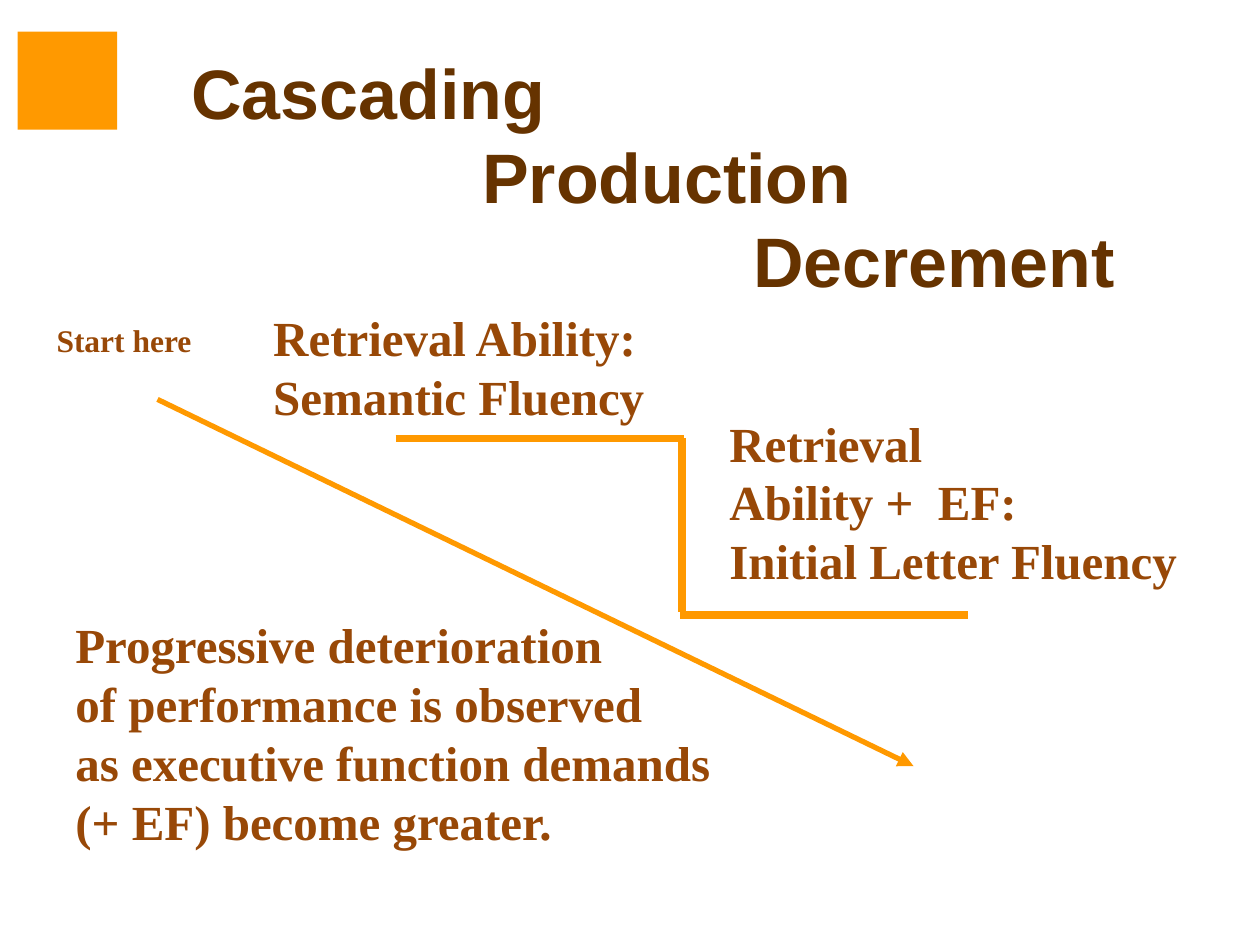
from lxml.etree import SubElement
from pptx import Presentation
from pptx.dml.color import RGBColor
from pptx.enum.shapes import MSO_CONNECTOR, MSO_SHAPE
from pptx.enum.text import MSO_ANCHOR
from pptx.oxml.ns import qn
from pptx.util import Inches, Pt

BROWN = RGBColor(0x66, 0x33, 0x00)
RUST = RGBColor(0x98, 0x48, 0x07)
GOLD = RGBColor(0xFF, 0x99, 0x00)

HEAD = {"name": "Arial", "size": Pt(40), "bold": True}
BODY = {"name": "Times New Roman", "size": Pt(28), "bold": True}
NOTE = {**BODY, "size": Pt(18)}
LEAD = 1.2  # line pitch as a share of the text size

# Text boxes: place, wrap, format, colour, lines as (indent, words)
TEXTS = [
    ((1.42, 0.77, 8.5, 1.25), True, HEAD, BROWN,
     [(0, "Cascading"), (2.31, "Production"), (4.46, "Decrement")]),
    ((2.07, 2.39, 3.22, 1.04), False, BODY, RUST,
     [(0, "Retrieval Ability:"), (0, "Semantic Fluency")]),
    ((5.69, 3.23, 3.95, 1.51), True, BODY, RUST,
     [(0, "Retrieval"), (0, "Ability +  EF:"), (0, "Initial Letter Fluency")]),
    ((0.5, 4.83, 5.42, 1.97), True, BODY, RUST,
     [(0, "Progressive deterioration"), (0, "of performance is observed"),
      (0, "as executive function demands (+ EF) become greater.")]),
    ((0.35, 2.5, 1.28, 0.4), False, NOTE, RUST, [(0, "Start here")]),
]

# Lines: start, end, width, arrow at the end
LINES = [
    ((3.14, 3.48), (5.43, 3.48), 4.5, False),
    ((5.41, 3.48), (5.41, 4.86), 4.5, False),
    ((5.4, 4.88), (7.68, 4.88), 4.5, False),
    ((1.25, 3.17), (7.25, 6.08), 3, True),
]

deck = Presentation()
deck.slide_width, deck.slide_height = Inches(10), Inches(7.5)
slide = deck.slides.add_slide(deck.slide_layouts[6])


def add_text(place, wrap, form, color, lines):
    frame = slide.shapes.add_textbox(*map(Inches, place)).text_frame
    frame.word_wrap = wrap
    if form is HEAD:
        frame.vertical_anchor = MSO_ANCHOR.MIDDLE
    for i, (indent, words) in enumerate(lines):
        para = frame.add_paragraph() if i else frame.paragraphs[0]
        para.line_spacing = Pt(form["size"].pt * LEAD)
        if indent:
            para._p.get_or_add_pPr().set("marL", str(Inches(indent)))
        run = para.add_run()
        run.text = words
        for key, value in form.items():
            setattr(run.font, key, value)
        run.font.color.rgb = color


def add_line(start, end, width, arrow):
    line = slide.shapes.add_connector(
        MSO_CONNECTOR.STRAIGHT, *map(Inches, start + end))
    line.line.color.rgb = GOLD
    line.line.width = Pt(width)
    if arrow:
        SubElement(line.line._get_or_add_ln(), qn("a:tailEnd"), type="triangle")
    SubElement(line._element.spPr, qn("a:effectLst"))


# Steps and falling arrow
for item in LINES:
    add_line(*item)

# Title and labels
for item in TEXTS:
    add_text(*item)

# Corner block
block = slide.shapes.add_shape(
    MSO_SHAPE.RECTANGLE, *map(Inches, (0.14, 0.25, 0.79, 0.78)))
block.shadow.inherit = False
block.fill.solid()
block.fill.fore_color.rgb = GOLD
block.line.fill.background()

deck.save("out.pptx")
